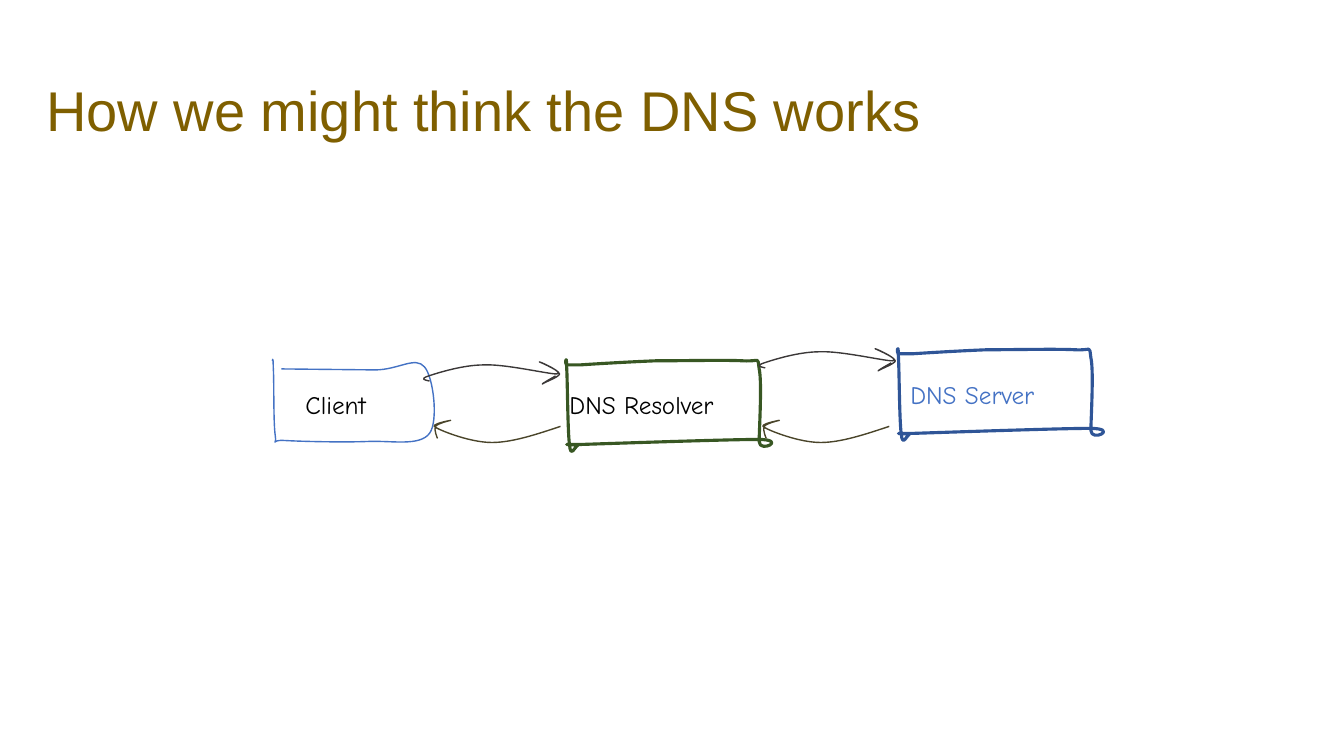
import pptx
import pptx.util
import pptx.dml.color
import pptx.enum.text
import pptx.oxml.ns
import lxml.etree

Inches = pptx.util.Inches
Pt = pptx.util.Pt
qn = pptx.oxml.ns.qn

COLORS = {
    "title": "7F5F00", "black": "000000", "blue": "4472C4", "green": "385723",
    "navy": "2F5597", "request": "3B3838", "reply": "4A452A",
}
TITLE = "How we might think the DNS works"

# A stroke has its bounds (left, top, width, height), its start point, and steps:
# one point is a straight line, three points are a curve (control, control, end).
CLIENT_BOX = ((2.7, 3.56, 1.61, 0.82), (2.79, 3.66), [
    [(3.72, 3.67)],
    [(3.95, 3.67), (4.12, 3.53), (4.21, 3.64)],
    [(4.3, 3.74), (4.35, 4.18), (4.26, 4.3)],
    [(4.16, 4.43), (3.89, 4.37), (3.65, 4.38)],
    [(3.41, 4.39), (2.98, 4.38), (2.82, 4.37)],
    [(2.67, 4.36), (2.75, 4.44), (2.73, 4.32)],
    [(2.71, 4.19), (2.72, 3.76), (2.71, 3.64)],
    [(2.71, 3.52), (2.7, 3.58), (2.7, 3.58)],
])
DNS_BOX = ((5.61, 3.56, 2.04, 0.91), (5.76, 3.62), [
    [(5.91, 3.61), (6.24, 3.59), (6.5, 3.58)],
    [(6.77, 3.58), (7.2, 3.57), (7.37, 3.58)],
    [(7.55, 3.59), (7.51, 3.53), (7.53, 3.66)],
    [(7.56, 3.79), (7.53, 4.27), (7.53, 4.38)],
    [(7.53, 4.5), (7.82, 4.36), (7.52, 4.36)],
    [(7.23, 4.36), (6.06, 4.4), (5.76, 4.41)],
    [(5.46, 4.41), (5.74, 4.41), (5.73, 4.42)],
    [(5.71, 4.42), (5.66, 4.55), (5.65, 4.42)],
    [(5.63, 4.29), (5.63, 3.76), (5.62, 3.63)],
    [(5.62, 3.49), (5.6, 3.62), (5.62, 3.62)],
    [(5.65, 3.62), (5.61, 3.62), (5.76, 3.62)],
])
REQUEST_ARROW = ((4.2, 3.59, 1.35, 0.21), (4.26, 3.78), [
    [(4.21, 3.77), (4.16, 3.76), (4.25, 3.73)],
    [(4.34, 3.7), (4.59, 3.62), (4.8, 3.62)],
    [(5.01, 3.61), (5.43, 3.71), (5.52, 3.71)],
    [(5.61, 3.7), (5.35, 3.59), (5.35, 3.59)],
    [(5.36, 3.59), (5.54, 3.67), (5.55, 3.71)],
    [(5.55, 3.74), (5.38, 3.8), (5.38, 3.81)],
    [(5.37, 3.81), (5.44, 3.77), (5.51, 3.73)],
])
REPLY_ARROW = ((4.31, 4.17, 1.26, 0.21), (5.56, 4.23), [
    [(5.32, 4.31), (5.08, 4.39), (4.88, 4.39)],
    [(4.67, 4.39), (4.39, 4.28), (4.32, 4.24)],
    [(4.25, 4.21), (4.47, 4.17), (4.47, 4.17)],
    [(4.47, 4.17), (4.34, 4.2), (4.32, 4.23)],
    [(4.3, 4.26), (4.34, 4.35), (4.34, 4.35)],
    [(4.34, 4.35)],
])

# stroke, shift right, shift down, colour, line width, closed
CLIENT = (CLIENT_BOX, 0, 0, "blue", 1, False)
RESOLVER = (DNS_BOX, 0, 0, "green", 2.25, True)
SERVER = (DNS_BOX, 3.29, -0.11, "navy", 2.25, True)
ARROWS = [
    (REQUEST_ARROW, 0, 0, "request", 1, False),
    (REQUEST_ARROW, 3.33, -0.13, "request", 1, False),
    (REPLY_ARROW, 0, 0, "reply", 1, False),
    (REPLY_ARROW, 3.26, 0, "reply", 1, False),
]
# text, left, top, width, colour
CLIENT_LABEL = ("Client", 2.93, 3.81, 1.01, "black")
RESOLVER_LABEL = ("DNS Resolver", 5.55, 3.81, 2.07, "black")
SERVER_LABEL = ("DNS Server", 8.93, 3.71, 1.84, "blue")


def rgb(name):
    return pptx.dml.color.RGBColor.from_string(COLORS[name])


def format_text(para, font_name, size, color):
    for span in para.runs:
        span.font.name = font_name
        span.font.size = Pt(size)
        span.font.color.rgb = rgb(color)


def bend_outline(sketch, bounds, start, steps, closed):
    """Redraw the freeform's outline with true curves inside its bounds."""
    left, top, width, height = bounds
    outline = sketch.element.find(".//" + qn("a:path"))
    for command in list(outline):
        outline.remove(command)
    outline.set("w", str(Inches(width)))
    outline.set("h", str(Inches(height)))
    tags = {1: "a:lnTo", 3: "a:cubicBezTo"}
    commands = [("a:moveTo", [start])] + [(tags[len(step)], step) for step in steps]
    for tag, points in commands:
        command = lxml.etree.SubElement(outline, qn(tag))
        for x, y in points:
            lxml.etree.SubElement(command, qn("a:pt"),
                                  x=str(Inches(x - left)), y=str(Inches(y - top)))
    if closed:
        lxml.etree.SubElement(outline, qn("a:close"))


def add_sketch(page, stroke, right, down, color, width, closed):
    bounds, start, steps = stroke
    builder = page.shapes.build_freeform(Inches(start[0]), Inches(start[1]))
    builder.add_line_segments(
        [(Inches(step[-1][0]), Inches(step[-1][1])) for step in steps], close=closed)
    sketch = builder.convert_to_shape()
    sketch.left, sketch.top = Inches(bounds[0] + right), Inches(bounds[1] + down)
    sketch.width, sketch.height = Inches(bounds[2]), Inches(bounds[3])
    bend_outline(sketch, bounds, start, steps, closed)
    sketch.shadow.inherit = False
    sketch.fill.background()
    sketch.line.color.rgb = rgb(color)
    sketch.line.width = Pt(width)


def add_label(page, text, left, top, width, color):
    box = page.shapes.add_textbox(Inches(left), Inches(top), Inches(width), Inches(0.4))
    frame = box.text_frame
    frame.text = text
    frame.word_wrap = False
    frame.auto_size = pptx.enum.text.MSO_AUTO_SIZE.SHAPE_TO_FIT_TEXT
    format_text(frame.paragraphs[0], "Comic Neue", 18, color)


def add_title(page):
    title = page.shapes.title
    title.left, title.top = Inches(0.36), Inches(0.4)
    title.width, title.height = Inches(12.06), Inches(1.45)
    frame = title.text_frame
    frame.text = TITLE
    frame.auto_size = pptx.enum.text.MSO_AUTO_SIZE.NONE
    frame.vertical_anchor = pptx.enum.text.MSO_ANCHOR.MIDDLE
    para = frame.paragraphs[0]
    para.alignment = pptx.enum.text.PP_ALIGN.LEFT
    para.line_spacing = 0.9
    format_text(para, "Arial", 40, "title")


def main():
    deck = pptx.Presentation()
    deck.slide_width, deck.slide_height = Inches(13.33), Inches(7.5)
    page = deck.slides.add_slide(deck.slide_layouts[5])
    add_title(page)
    add_sketch(page, *CLIENT)
    add_label(page, *CLIENT_LABEL)
    add_sketch(page, *RESOLVER)
    add_label(page, *RESOLVER_LABEL)
    for arrow in ARROWS:
        add_sketch(page, *arrow)
    add_sketch(page, *SERVER)
    add_label(page, *SERVER_LABEL)
    deck.save("out.pptx")


if __name__ == "__main__":
    main()
